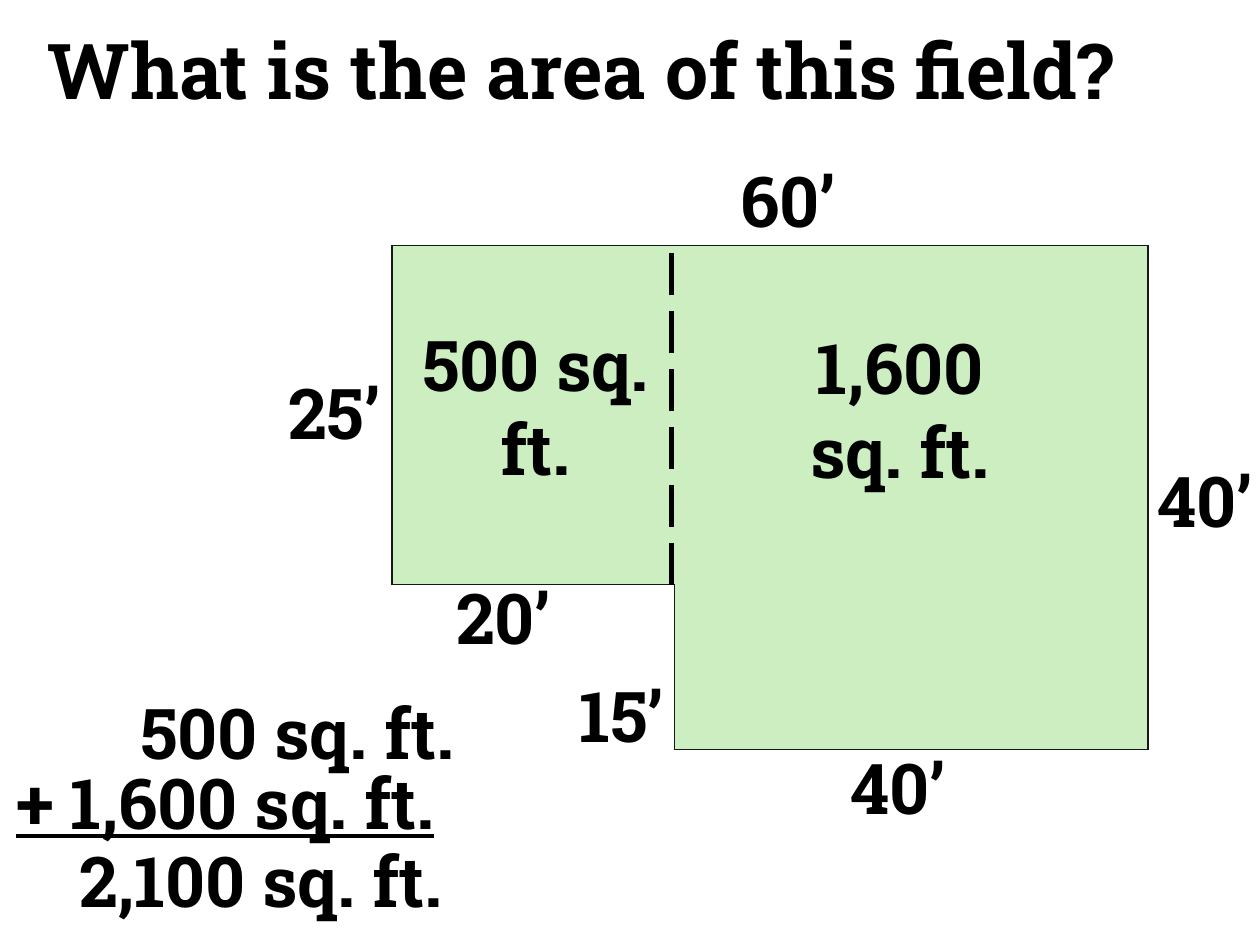
from lxml import etree
from pptx import Presentation
from pptx.dml.color import RGBColor
from pptx.enum.dml import MSO_LINE
from pptx.enum.shapes import MSO_CONNECTOR
from pptx.enum.text import MSO_ANCHOR, PP_ALIGN
from pptx.oxml.ns import qn
from pptx.util import Pt

LEFT, CENTER = PP_ALIGN.LEFT, PP_ALIGN.CENTER
MIDDLE = MSO_ANCHOR.MIDDLE
STRAIGHT = MSO_CONNECTOR.STRAIGHT
LONG_DASH = MSO_LINE.LONG_DASH

FONT = "Roboto Slab"
COLORS = {"text": "000000", "field": "CCEEC1", "border": "181717"}
LABEL_HEIGHT = 55.4


def rgb(name):
    return RGBColor.from_string(COLORS[name])


def add_text(slide, text, left, top, width, height=LABEL_HEIGHT, size=40,
             align=CENTER, underline=False, spacing=1.0):
    box = slide.shapes.add_textbox(Pt(left), Pt(top), Pt(width), Pt(height))
    frame = box.text_frame
    frame.word_wrap = True
    frame.vertical_anchor = MIDDLE
    frame.margin_left = frame.margin_right = Pt(0)
    frame.margin_top = frame.margin_bottom = Pt(0)
    paragraph = frame.paragraphs[0]
    paragraph.alignment = align
    paragraph.line_spacing = spacing
    run = paragraph.add_run()
    run.text = text
    run.font.name = FONT
    run.font.size = Pt(size)
    run.font.bold = True
    run.font.underline = underline
    run.font.color.rgb = rgb("text")
    return box


def style_cell(cell, sides, filled):
    """Fill the cell and draw borders only on the given sides (L, R, T, B)."""
    properties = cell._tc.get_or_add_tcPr()
    for side in "LRTB":
        border = etree.SubElement(properties, qn(f"a:ln{side}"), w=str(Pt(1)))
        if side in sides:
            solid = etree.SubElement(border, qn("a:solidFill"))
            etree.SubElement(solid, qn("a:srgbClr"), val=COLORS["border"])
        else:
            etree.SubElement(border, qn("a:noFill"))
    if filled:
        cell.fill.solid()
        cell.fill.fore_color.rgb = rgb("field")
    else:
        cell.fill.background()


def add_field(slide, left, top, columns, rows):
    """L-shaped field: a full-width top row and a filled lower right cell."""
    frame = slide.shapes.add_table(2, 2, Pt(left), Pt(top),
                                   Pt(sum(columns)), Pt(sum(rows)))
    table = frame.table
    table.first_row = table.horz_banding = False
    for column, width in zip(table.columns, columns):
        column.width = Pt(width)
    for row, height in zip(table.rows, rows):
        row.height = Pt(height)
    table.cell(0, 0).merge(table.cell(0, 1))
    style_cell(table.cell(0, 0), "LRT", True)
    style_cell(table.cell(0, 1), "RT", True)
    table.cell(0, 0)._tc.tcPr.find(qn("a:lnB"))
    style_cell(table.cell(1, 0), "TR", False)
    style_cell(table.cell(1, 1), "LRB", True)

    # Dashed line that splits the field into two rectangles
    x = left + columns[0] - 1.4
    divider = slide.shapes.add_connector(STRAIGHT, Pt(x), Pt(top + rows[0]),
                                         Pt(x), Pt(top + 2))
    divider.line.color.rgb = rgb("text")
    divider.line.width = Pt(3)
    divider.line.dash_style = LONG_DASH
    etree.SubElement(divider._element.spPr, qn("a:effectLst"))


def add_field_labels(slide, left, top):
    # Side lengths: text, offset from the field's corner, width
    sides = [("60’", 180, -54, 93), ("25’", -72.5, 67, 79),
             ("20’", 23, 184.3, 81.4), ("15’", 90, 240, 82.8),
             ("40’", 240, 281.5, 98), ("40’", 434.7, 117.4, 60)]
    for text, x, y, width in sides:
        add_text(slide, text, left + x, top + y, width)

    # Area of each rectangle
    for text, x, y in [("500 sq. ft.", 15, 39), ("1,600 sq. ft.", 223.2, 41)]:
        add_text(slide, text, left + x, top + y, 134, 104.4)


def add_sum(slide, left, top):
    # Text, offset from the corner of the region, underline
    lines = [("500 sq. ft.", 71, 0, False),
             ("+ 1,600 sq. ft.", 0, 39.6, True),
             ("2,100 sq. ft.", 36, 84.2, False)]
    for text, x, y, underline in lines:
        add_text(slide, text, left + x, top + y, 260, 53, align=LEFT,
                 underline=underline)


def main():
    presentation = Presentation()
    presentation.slide_width = Pt(720)
    presentation.slide_height = Pt(540)
    slide = presentation.slides.add_slide(presentation.slide_layouts[6])

    field_left, field_top = 224, 140.4
    add_field(slide, field_left, field_top, (161.3, 270.7), (193.7, 94.3))
    add_field_labels(slide, field_left, field_top)
    add_sum(slide, 9.2, 391.7)
    add_text(slide, "What is the area of this field?", 27.4, 15, 660, 55,
             size=44, align=LEFT, spacing=0.9)
    presentation.save("out.pptx")


if __name__ == "__main__":
    main()
